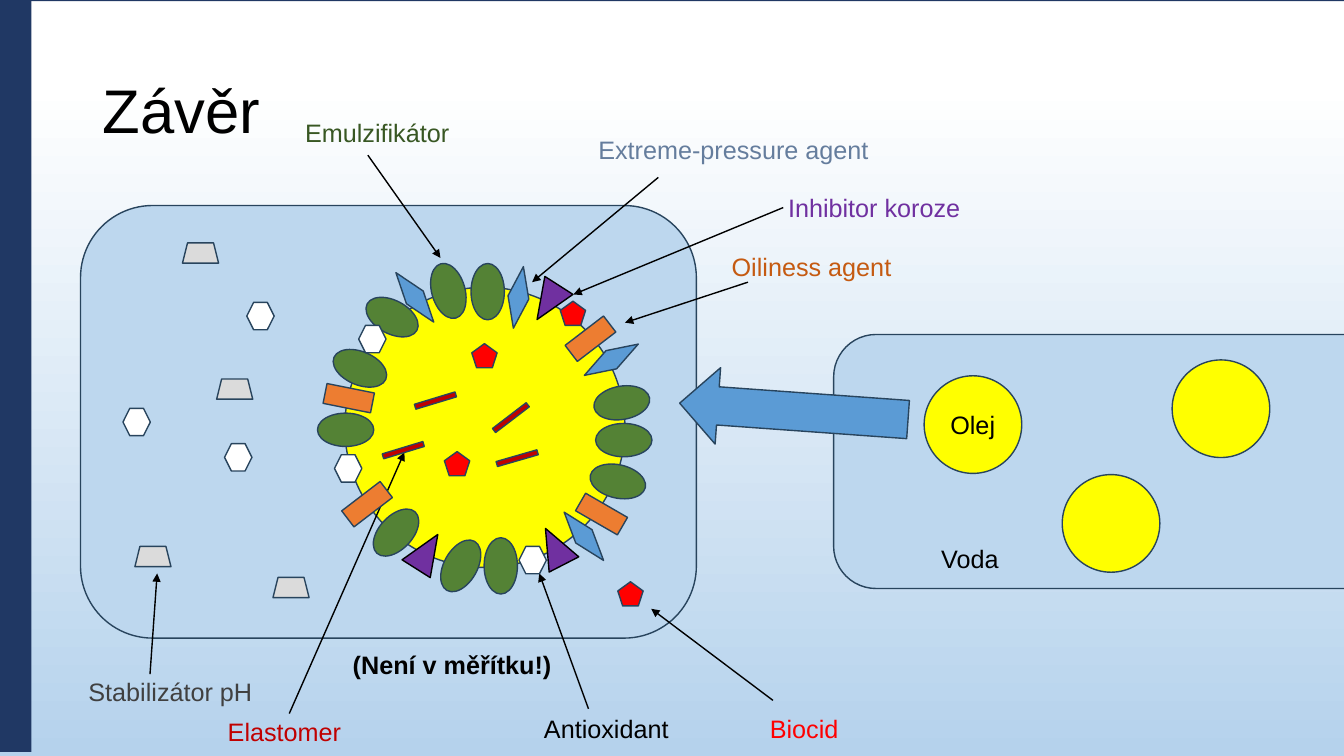
"""Build the closing slide: an oil droplet in water with its emulsion additives."""
from dataclasses import dataclass

from lxml.etree import SubElement
from pptx import Presentation
from pptx.dml.color import RGBColor
from pptx.enum.shapes import MSO_CONNECTOR as Connector, MSO_SHAPE as Preset
from pptx.enum.text import MSO_ANCHOR as Anchor
from pptx.oxml.ns import qn
from pptx.slide import Slide
from pptx.util import Cm, Pt

FONT = "Arial"
BLACK = RGBColor(0x00, 0x00, 0x00)
WHITE = RGBColor(0xFF, 0xFF, 0xFF)
NAVY = RGBColor(0x20, 0x38, 0x64)
OUTLINE = RGBColor(0x28, 0x44, 0x5D)
SKY = RGBColor(0xB5, 0xD2, 0xEC)
WATER = RGBColor(0xBD, 0xD7, 0xEE)
OIL = RGBColor(0xFF, 0xFF, 0x00)
GREEN = RGBColor(0x54, 0x82, 0x35)
DARK_GREEN = RGBColor(0x38, 0x57, 0x23)
ORANGE = RGBColor(0xED, 0x7D, 0x31)
DARK_ORANGE = RGBColor(0xC5, 0x5A, 0x11)
DARK_RED = RGBColor(0xC0, 0x00, 0x00)
RED = RGBColor(0xFF, 0x00, 0x00)
BLUE = RGBColor(0x5B, 0x9B, 0xD5)
SLATE = RGBColor(0x65, 0x7D, 0x9D)
PURPLE = RGBColor(0x70, 0x30, 0xA0)
SILVER = RGBColor(0xDB, 0xDB, 0xDB)
GREY = RGBColor(0x40, 0x40, 0x40)


@dataclass(frozen=True)
class Figure:
    """A filled preset shape, measured in centimetres."""
    preset: Preset
    left: float
    top: float
    width: float
    height: float
    fill: RGBColor
    angle: float = 0
    line: RGBColor | None = OUTLINE


@dataclass(frozen=True)
class Label:
    """A line of text, measured in centimetres."""
    text: str
    left: float
    top: float
    width: float
    color: RGBColor = BLACK
    bold: bool = False


@dataclass(frozen=True)
class Additive:
    """A labelled additive; its spots are (left, top, angle)."""
    label: Label
    pointer: tuple[float, float, float, float]
    preset: Preset
    size: tuple[float, float]
    fill: RGBColor
    spots: list[tuple[float, float, float]]
    line: RGBColor = OUTLINE


ADDITIVES = [
    Additive(Label("Emulzifikátor", 7.44, 2.82, 4.37, DARK_GREEN), (9.27, 3.91, 11.1, 6.5),
             Preset.OVAL, (1.42, 0.84), GREEN,
             [(11.58, 6.93, 90), (11.91, 13.84, 90), (15.01, 10.67, 180), (8, 10.41, 180),
              (9.17, 7.57, 208), (9.27, 13, 132.9), (10.9, 13.84, 119.3), (8.36, 8.86, 202.8),
              (14.96, 9.73, 170.2), (14.86, 11.71, 192.7), (10.59, 6.91, 254.5)]),
    Additive(Label("Oiliness agent", 18.19, 6.2, 4.55, DARK_ORANGE), (18.85, 7.11, 15.75, 8.13),
             Preset.RECTANGLE, (1.22, 0.51), ORANGE,
             [(14.27, 8.28, 322.6), (8.64, 12.45, 322.6), (8.18, 9.78, 11.3), (14.55, 12.7, 30)]),
    Additive(Label("Elastomer", 5.49, 17.93, 3.56, DARK_RED), (7.29, 17.98, 10.19, 11.4),
             Preset.RECTANGLE, (1.07, 0.13), DARK_RED,
             [(12.5, 11.48, 343.9), (10.44, 10.03, 343.1), (12.34, 10.46, 322.6),
              (9.63, 11.28, 343.1)]),
    Additive(Label("Antioxidant", 13.46, 17.86, 4.5), (14.83, 17.86, 13.59, 14.45),
             Preset.HEXAGON, (0.69, 0.69), WHITE,
             [(13.08, 13.77, 0), (3.1, 10.29, 0), (6.22, 7.62, 0), (5.66, 11.18, 0),
              (9.04, 8.2, 0), (8.43, 11.46, 0)]),
    Additive(Label("Extreme-pressure agent", 14.83, 3.25, 8.89, SLATE), (16.59, 4.47, 13.41, 7.11),
             Preset.DIAMOND, (0.53, 1.57), BLUE,
             [(14.45, 12.73, 320.7), (12.8, 6.71, 9.2), (15.14, 8.28, 239.9),
              (10.19, 6.71, 322.6)]),
    Additive(Label("Inhibitor koroze", 19.61, 4.72, 5.46, PURPLE), (19.74, 5.23, 14.45, 7.42),
             Preset.ISOSCELES_TRIANGLE, (0.84, 1.02), PURPLE,
             [(13.39, 7.11, 212.6), (13.56, 13.26, 332.8), (10.34, 13.39, 32.3)], BLACK),
    Additive(Label("Biocid", 19.15, 17.86, 2.57, RED), (19.48, 17.65, 16.41, 15.34),
             Preset.REGULAR_PENTAGON, (0.64, 0.61), RED,
             [(11.89, 8.66, 0), (11.2, 11.38, 0), (14.12, 7.59, 0), (15.57, 14.66, 0)]),
    Additive(Label("Stabilizátor pH", 1.98, 16.92, 5.44, GREY), (3.78, 16.99, 3.96, 14.45),
             Preset.TRAPEZOID, (0.91, 0.51), SILVER,
             [(3.4, 13.77, 0), (5.46, 9.55, 0), (6.88, 14.55, 0), (4.6, 6.12, 0)]),
]

EMULSION = [
    Figure(Preset.ROUNDED_RECTANGLE, 2.03, 5.18, 15.52, 10.9, WATER),
    Figure(Preset.OVAL, 8.69, 7.24, 7.06, 7.06, OIL),
]
OIL_DROPS = [(23.29, 9.47), (26.77, 11.96), (29.54, 9.07)]
SURROUNDINGS = [
    Figure(Preset.ROUNDED_RECTANGLE, 21.01, 8.43, 14.38, 6.4, WATER),
    *(Figure(Preset.OVAL, left, top, 2.46, 2.46, OIL) for left, top in OIL_DROPS),
    Figure(Preset.RIGHT_ARROW, 17.12, 9.4, 5.77, 1.93, BLUE, 184.1),
    Figure(Preset.RECTANGLE, 0, 0, 0.79, 18.95, NAVY, line=None),
    Figure(Preset.RECTANGLE, 0, -0.1, 33.87, 0.13, NAVY, line=None),
]
CAPTIONS = [
    Label("(Není v měřítku!)", 8.64, 16.23, 5.82, bold=True),
    Label("Voda", 23.47, 13.56, 2.08),
    Label("Olej", 23.7, 10.19, 1.68),
]


def paint_background(page: Slide) -> None:
    """Fade the page from white down to light blue."""
    fill = page.background.fill
    fill.gradient()
    fill.gradient_angle = 270
    for stop, color, position in zip(fill.gradient_stops, (WHITE, SKY), (0.11, 1)):
        stop.color.rgb = color
        stop.position = position


def draw_figure(page: Slide, figure: Figure) -> None:
    """Draw one preset shape."""
    shape = page.shapes.add_shape(figure.preset, Cm(figure.left), Cm(figure.top),
                                  Cm(figure.width), Cm(figure.height))
    shape.rotation = figure.angle
    shape.shadow.inherit = False
    shape.fill.solid()
    shape.fill.fore_color.rgb = figure.fill
    if figure.line is None:
        shape.line.fill.background()
    else:
        shape.line.color.rgb = figure.line
        shape.line.width = Pt(1)


def draw_pointer(page: Slide, pointer: tuple[float, float, float, float]) -> None:
    """Draw a thin black arrow."""
    arrow = page.shapes.add_connector(Connector.STRAIGHT, *map(Cm, pointer))
    arrow.line.color.rgb = BLACK
    arrow.line.width = Pt(1)
    SubElement(arrow.line._get_or_add_ln(), qn("a:tailEnd"), type="triangle")
    SubElement(arrow._element.spPr, qn("a:effectLst"))


def write_text(page: Slide, text: str, *, left: float, top: float, width: float,
               height: float = 1.02, size: float = 18, color: RGBColor = BLACK,
               bold: bool = False, anchor: Anchor = Anchor.TOP, spacing: float = 1) -> None:
    """Place a text box with one formatted paragraph."""
    box = page.shapes.add_textbox(Cm(left), Cm(top), Cm(width), Cm(height))
    box.text_frame.word_wrap = True
    box.text_frame.vertical_anchor = anchor
    para = box.text_frame.paragraphs[0]
    para.line_spacing = spacing
    span = para.add_run()
    span.text = text
    span.font.name = FONT
    span.font.size = Pt(size)
    span.font.bold = bold
    span.font.color.rgb = color


def write_label(page: Slide, label: Label) -> None:
    """Write one label of the drawing."""
    write_text(page, label.text, left=label.left, top=label.top, width=label.width,
               color=label.color, bold=label.bold)


def main() -> None:
    """Compose the slide and save the deck."""
    deck = Presentation()
    deck.slide_width, deck.slide_height = Cm(33.87), Cm(19.05)
    page = deck.slides.add_slide(deck.slide_layouts[6])
    paint_background(page)
    for figure in EMULSION:
        draw_figure(page, figure)
    for additive in ADDITIVES:
        draw_pointer(page, additive.pointer)
        write_label(page, additive.label)
    for additive in ADDITIVES:
        for left, top, angle in additive.spots:
            draw_figure(page, Figure(additive.preset, left, top, *additive.size,
                                     additive.fill, angle, additive.line))
    for figure in SURROUNDINGS:
        draw_figure(page, figure)
    for caption in CAPTIONS:
        write_label(page, caption)
    write_text(page, "Závěr", left=2.34, top=1.02, width=29.21, height=3.68, size=44,
               anchor=Anchor.MIDDLE, spacing=0.9)
    deck.save("out.pptx")


if __name__ == "__main__":
    main()
